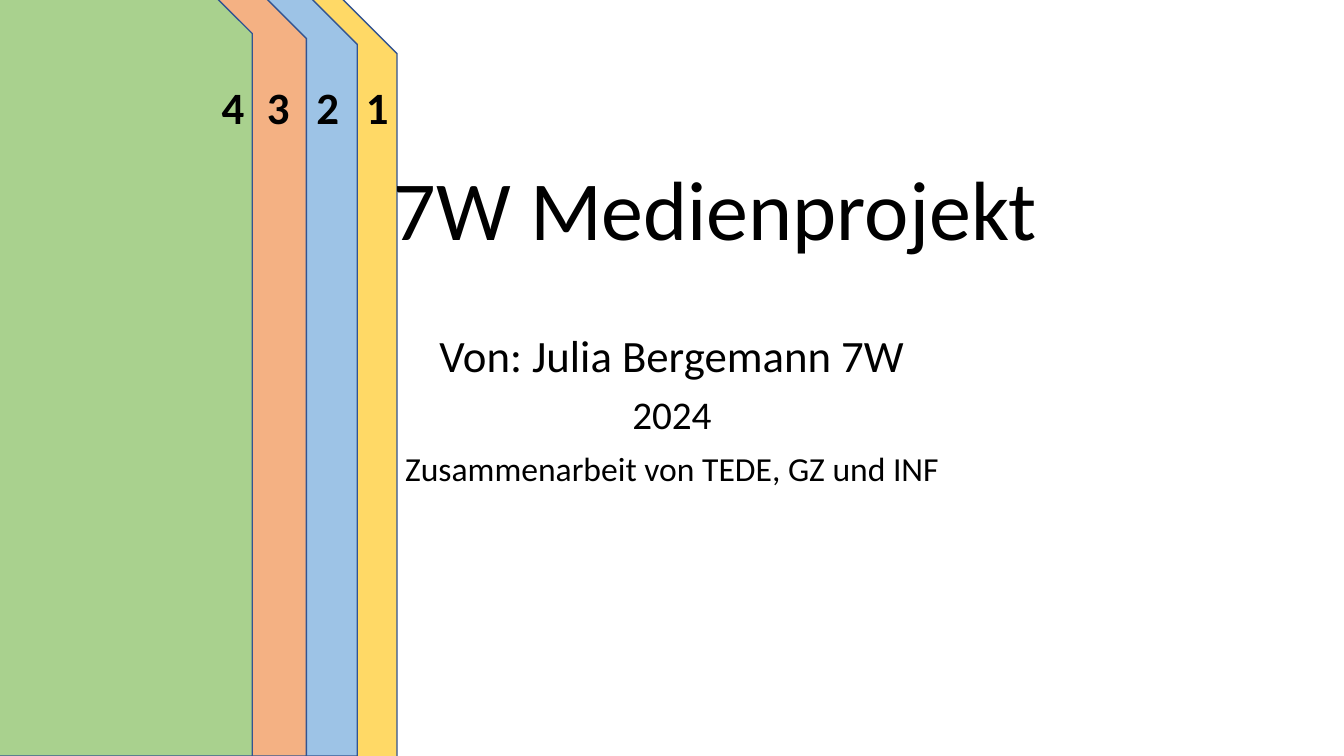
"""Build the title slide with its four coloured, numbered index tabs."""
import pptx
import pptx.dml.color
import pptx.enum.shapes
import pptx.enum.text
import pptx.util

Pt = pptx.util.Pt
RGB = pptx.dml.color.RGBColor
Kind = pptx.enum.shapes.MSO_SHAPE
Align = pptx.enum.text.PP_ALIGN
Anchor = pptx.enum.text.MSO_ANCHOR

BLACK = RGB(0, 0, 0)
NAVY = RGB(0x32, 0x54, 0x91)
GOLD = RGB(0xFF, 0xD9, 0x66)
BLUE = RGB(0x9D, 0xC3, 0xE6)
PEACH = RGB(0xF4, 0xB1, 0x83)
GREEN = RGB(0xA9, 0xD1, 0x8E)


class Page:
    def __init__(self, slide, font="Calibri", ink=BLACK, edge=NAVY):
        self.slide = slide
        self.font = font
        self.ink = ink
        self.edge = edge

    def tab(self, left, width, height, fill, kind=Kind.SNIP_ROUND_RECTANGLE):
        shape = self.slide.shapes.add_shape(
            kind, Pt(left), Pt(-13.5), Pt(width), Pt(height))
        shape.shadow.inherit = False
        shape.fill.solid()
        shape.fill.fore_color.rgb = fill
        shape.line.color.rgb = self.edge
        shape.line.width = Pt(1)

    def text(self, box, lines, align=Align.CENTER, anchor=Anchor.TOP,
             bold=False, space=0.9, before=0):
        frame = self.slide.shapes.add_textbox(*map(Pt, box)).text_frame
        frame.word_wrap = True
        frame.vertical_anchor = anchor
        frame.text = "\n".join(words for words, size in lines)
        for para, (words, size) in zip(frame.paragraphs, lines):
            para.alignment = align
            para.line_spacing = space
            para.space_before = Pt(before)
            para.font.name = self.font
            para.font.size = Pt(size)
            para.font.bold = bold
            para.font.color.rgb = self.ink

    def label(self, left, width, digit):
        self.text((left, 53.3, width, 46), [(digit, 32)],
                  align=Align.LEFT, bold=True, space=1)


def main():
    deck = pptx.Presentation()
    deck.slide_width, deck.slide_height = Pt(960), Pt(540)
    page = Page(deck.slides.add_slide(deck.slide_layouts[6]))

    page.text((120, 234.7, 720, 130),
              [("Von: Julia Bergemann 7W", 32), ("2024", 28),
               ("Zusammenarbeit von TEDE, GZ und INF", 24)], before=10)
    page.tab(-27.4, 311, 564, GOLD)
    page.tab(-15.8, 271, 553.5, BLUE)
    page.tab(-27.4, 246.3, 553.5, PEACH)
    page.text((151.2, 0, 720, 188), [("7W Medienprojekt", 60)],
              anchor=Anchor.BOTTOM)
    page.tab(-44.6, 224.8, 553.5, GREEN, Kind.SNIP_1_RECTANGLE)

    for left, width, digit in ((218.9, 40, "2"), (183.6, 30, "3"),
                               (151.2, 23, "4"), (254.2, 28, "1")):
        page.label(left, width, digit)
    deck.save("out.pptx")


if __name__ == "__main__":
    main()
